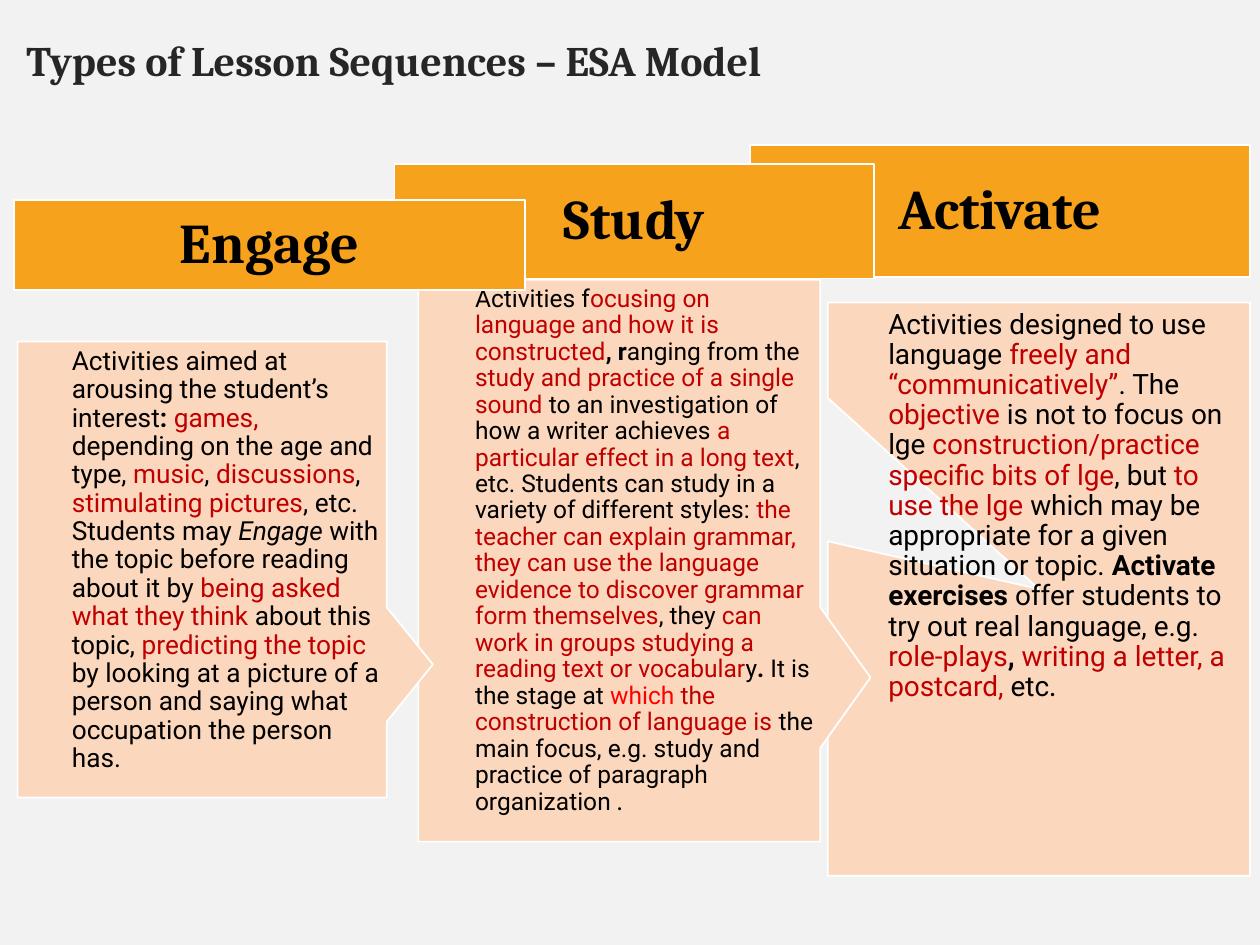
from pptx import Presentation
from pptx.dml.color import RGBColor
from pptx.enum.shapes import MSO_SHAPE
from pptx.enum.text import MSO_ANCHOR, PP_ALIGN
from pptx.util import Inches, Pt

COLORS = {"bg": "F2F2F2", "title": "262626", "header": "F6A21D",
          "panel": "FBD7BD", "line": "FFFFFF", "text": "000000",
          "key": "C00000", "alert": "FF0000"}

# Run styles: colour name plus font attributes
STYLES = {
    "text": ("text", {}),
    "key": ("key", {}),
    "alert": ("alert", {}),
    "bold": ("text", {"bold": True}),
    "italic": ("text", {"italic": True}),
    "end": ("text", {"name": "Calibri"}),
}

TITLE = "Types of Lesson Sequences – ESA Model"

# Stages from back to front; boxes are left, top, width, height
STAGES = [
    {"name": "Activate", "header": (5.95, 1.15, 3.97, 1.05),
     "panel": (6.57, 2.4, 3.35, 4.55), "pointer": (0, 0),
     "indent": 0.42, "inset": 0.06, "size": 16,
     "runs": [
         ("Activities designed to use language ", "text"),
         ("freely and “communicatively”", "key"),
         (". The ", "text"),
         ("objective", "key"),
         (" is not to focus on lge ", "text"),
         ("construction/practice specific bits of lge", "key"),
         (", but ", "text"),
         ("to use the lge ", "key"),
         ("which may be appropriate for a given situation or topic. ", "text"),
         ("Activate exercises ", "bold"),
         ("offer students to try out real language, e.g. ", "text"),
         ("role-plays", "key"),
         (", ", "bold"),
         ("writing a letter, a postcard,", "key"),
         (" etc", "text"),
         (".", "end")]},
    {"name": "Study", "header": (3.13, 1.3, 3.81, 0.91),
     "panel": (3.32, 2.22, 3.19, 4.46), "pointer": (0.625, 0.208),
     "indent": 0.4, "inset": 0.05, "size": 14,
     "runs": [
         ("Activities f", "text"),
         ("ocusing on language and how it is constructed", "key"),
         (", r", "bold"),
         ("anging from the ", "text"),
         ("study and practice of a single sound ", "key"),
         ("to an investigation of how a writer achieves ", "text"),
         ("a particular effect in a long text", "key"),
         (", etc. Students can study in a variety of different styles: ", "text"),
         ("the teacher can explain grammar, they can use the language evidence "
          "to discover grammar form themselves", "key"),
         (", they ", "text"),
         ("can work in groups studying a reading text or vocabular", "key"),
         ("y", "text"),
         (".", "bold"),
         (" It is the stage at ", "text"),
         ("which ", "alert"),
         ("the construction of language is ", "key"),
         ("the main focus, e.g. study and practice of paragraph organization", "text"),
         (" .", "end")]},
    {"name": "Engage", "header": (0.11, 1.59, 4.06, 0.71),
     "panel": (0.14, 2.71, 2.93, 3.62), "pointer": (0.625, 0.208),
     "indent": 0.38, "inset": 0.05, "size": 15,
     "runs": [
         ("Activities aimed at arousing the student’s interest", "text"),
         (": ", "bold"),
         ("games,", "key"),
         (" depending on the age and type, ", "text"),
         ("music", "key"),
         (", ", "text"),
         ("discussions", "key"),
         (", ", "text"),
         ("stimulating pictures", "key"),
         (", etc. Students may ", "text"),
         ("Engage", "italic"),
         (" with the topic before reading about it by ", "text"),
         ("being asked what they think ", "key"),
         ("about this topic, ", "text"),
         ("predicting the topic", "key"),
         (" by looking at a picture of a person and saying what occupation "
          "the person has.", "text")]},
]


def rgb(name):
    return RGBColor.from_string(COLORS[name])


def add_run(p, text, color, **fmt):
    r = p.add_run()
    r.text = text
    r.font.color.rgb = rgb(color)
    for key, value in fmt.items():
        setattr(r.font, key, value)


def set_frame(tf, inset, anchor):
    tf.word_wrap = True
    tf.vertical_anchor = anchor
    for side in ("left", "top", "right", "bottom"):
        setattr(tf, f"margin_{side}", Inches(inset))


def add_box(slide, kind, box, fill):
    sp = slide.shapes.add_shape(kind, *map(Inches, box))
    sp.shadow.inherit = False
    sp.fill.solid()
    sp.fill.fore_color.rgb = rgb(fill)
    sp.line.color.rgb = rgb("line")
    sp.line.width = Pt(1)
    return sp


def add_stage(slide, stage):
    # Callout panel
    sp = add_box(slide, MSO_SHAPE.RECTANGULAR_CALLOUT, stage["panel"], "panel")
    for i, value in enumerate(stage["pointer"]):
        sp.adjustments[i] = value

    # Description, indented from the panel's left edge
    left, top, width, height = stage["panel"]
    indent = stage["indent"]
    box = (left + indent, top, width - indent, height)
    tf = slide.shapes.add_textbox(*map(Inches, box)).text_frame
    set_frame(tf, stage["inset"], MSO_ANCHOR.TOP)
    p = tf.paragraphs[0]
    p.line_spacing = 0.9
    for text, style in stage["runs"]:
        color, extra = STYLES[style]
        add_run(p, text, color,
                **{"name": "Roboto", "size": Pt(stage["size"]), **extra})

    # Header bar
    sp = add_box(slide, MSO_SHAPE.RECTANGLE, stage["header"], "header")
    set_frame(sp.text_frame, 0.11, MSO_ANCHOR.MIDDLE)
    p = sp.text_frame.paragraphs[0]
    p.alignment = PP_ALIGN.CENTER
    p.line_spacing = 0.9
    add_run(p, stage["name"], "text", name="Cambria", size=Pt(32), bold=True)


def main():
    prs = Presentation()
    prs.slide_width, prs.slide_height = Inches(10), Inches(7.5)
    s = prs.slides.add_slide(prs.slide_layouts[5])
    s.background.fill.solid()
    s.background.fill.fore_color.rgb = rgb("bg")

    # Title
    title = s.shapes.title
    title.left, title.top = Inches(0.11), Inches(0.22)
    title.width, title.height = Inches(9.56), Inches(6.96)
    title.text_frame.vertical_anchor = MSO_ANCHOR.TOP
    p = title.text_frame.paragraphs[0]
    p.alignment = PP_ALIGN.LEFT
    p.space_before = Pt(10)
    add_run(p, TITLE, "title", name="Cambria", size=Pt(24), bold=True)

    for stage in STAGES:
        add_stage(s, stage)

    prs.save("out.pptx")


if __name__ == "__main__":
    main()
